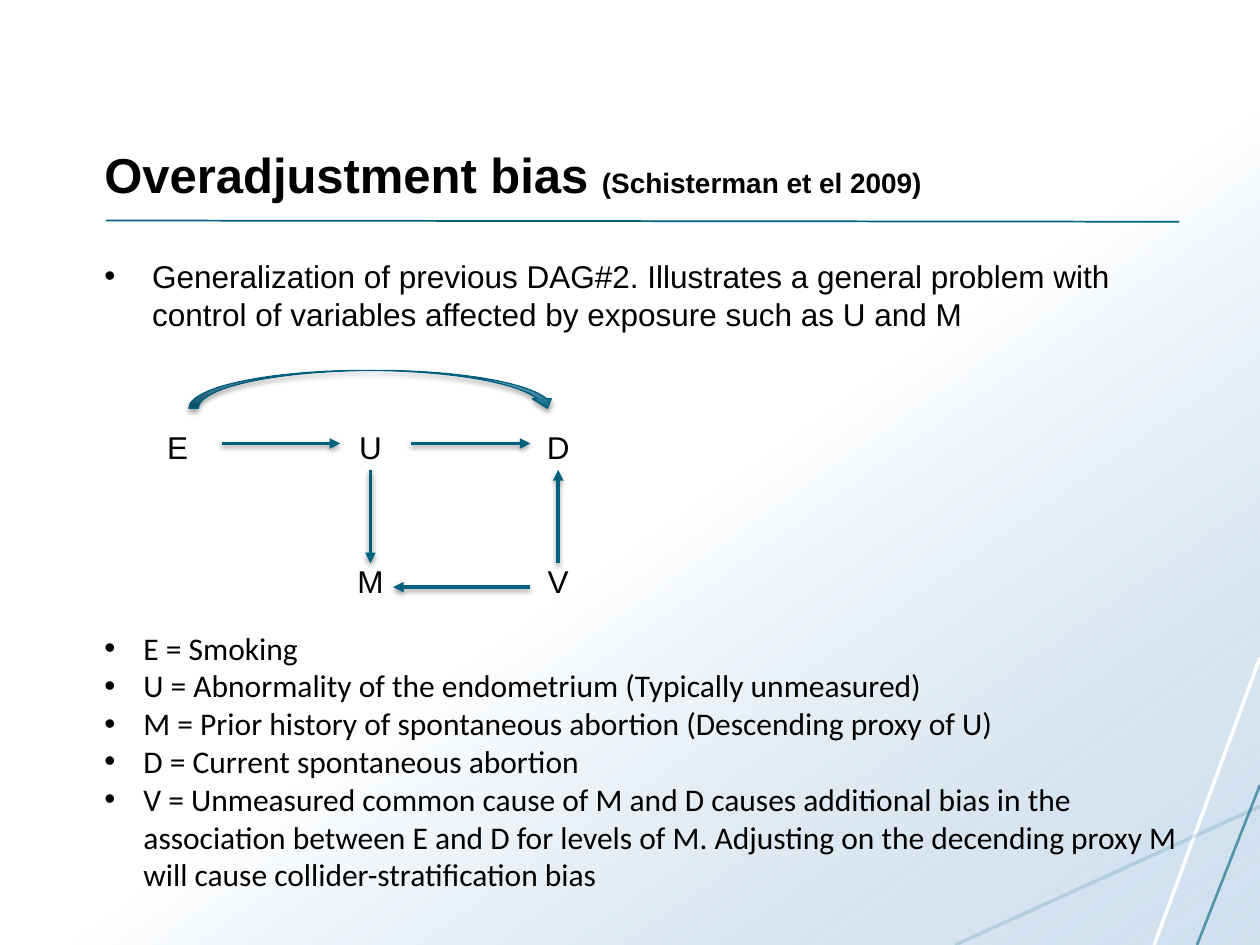
from lxml.etree import SubElement
from pptx import Presentation
from pptx.dml.color import RGBColor
from pptx.enum.shapes import MSO_CONNECTOR, MSO_SHAPE
from pptx.enum.text import MSO_ANCHOR, PP_ALIGN
from pptx.oxml.ns import qn
from pptx.util import Inches, Pt

TEAL, PALE, WHITE, BLACK = "00617F", "A9C7E0", "FFFFFF", "000000"
TOP, BOTTOM = 0, 2


def colour(value):
    return RGBColor.from_string(value)


def add_alpha(parent, percent):
    """Set the opacity of the colour inside parent."""
    for node in parent.iter(qn("a:srgbClr")):
        SubElement(node, qn("a:alpha"), val=str(percent * 1000))


def set_effect(shape, opacity=0, distance=1.6):
    """Give the shape a soft downward shadow, or none at all."""
    effects = SubElement(shape.element.spPr, qn("a:effectLst"))
    if opacity:
        shadow = SubElement(effects, qn("a:outerShdw"), blurRad=str(Pt(3.1)),
                            dist=str(Pt(distance)), dir="5400000", rotWithShape="0")
        SubElement(shadow, qn("a:srgbClr"), val=BLACK)
        add_alpha(shadow, opacity)


class SlideBuilder:
    def __init__(self, slide, font="Arial", size=18):
        self.slide = slide
        self.font = font
        self.size = size

    def span(self, para, text, size=None, font=None, bold=False):
        span = para.add_run()
        span.text = text
        span.font.size = Pt(size or self.size)
        span.font.name = font or self.font
        span.font.bold = bold
        span.font.color.rgb = colour(BLACK)

    def box(self, left, top, width, height, anchor=MSO_ANCHOR.TOP, margin=None):
        box = self.slide.shapes.add_textbox(
            Inches(left), Inches(top), Inches(width), Inches(height))
        frame = box.text_frame
        frame.word_wrap = True
        frame.vertical_anchor = anchor
        if margin is not None:
            frame.margin_left = frame.margin_right = Inches(margin)
            frame.margin_top = frame.margin_bottom = Inches(margin)
        return box

    def bullets(self, box, lines, indent, space_before=0, **style):
        frame = box.text_frame
        for number, line in enumerate(lines):
            para = frame.add_paragraph() if number else frame.paragraphs[0]
            para.space_before = Pt(space_before)
            properties = para._p.get_or_add_pPr()
            properties.set("marL", str(Inches(indent)))
            properties.set("indent", str(-Inches(indent)))
            SubElement(properties, qn("a:buFont"), typeface="Arial")
            SubElement(properties, qn("a:buChar"), char="•")
            self.span(para, line, **style)

    def node(self, text, centre, top, height):
        width = 0.3
        box = self.box(centre - width / 2, top, width, height, MSO_ANCHOR.MIDDLE, margin=0)
        para = box.text_frame.paragraphs[0]
        para.alignment = PP_ALIGN.CENTER
        self.span(para, text)
        return box

    def line(self, start, end, color=TEAL, width=2.0, opacity=100):
        line = self.slide.shapes.add_connector(
            MSO_CONNECTOR.STRAIGHT, *(Inches(value) for value in start + end))
        line.line.color.rgb = colour(color)
        line.line.width = Pt(width)
        if opacity < 100:
            add_alpha(line.line._get_or_add_ln(), opacity)
        return line

    def rule(self, *args, **style):
        set_effect(self.line(*args, **style))

    def arrow(self, start, end):
        arrow = self.line(start, end)
        SubElement(arrow.line._get_or_add_ln(), qn("a:tailEnd"), type="triangle")
        set_effect(arrow, opacity=38)
        return arrow

    def join(self, first, first_side, second, second_side):
        arrow = self.arrow((0, 0), (1, 1))
        arrow.begin_connect(first, first_side)
        arrow.end_connect(second, second_side)

    def gradient(self, kind, left, top, width, height, stops, angle):
        shape = self.slide.shapes.add_shape(
            kind, Inches(left), Inches(top), Inches(width), Inches(height))
        shape.fill.gradient()
        shape.fill.gradient_angle = angle
        for stop, (position, color) in zip(shape.fill.gradient_stops, stops):
            stop.position = position
            stop.color.rgb = colour(color)
        return shape


def main():
    deck = Presentation()
    deck.slide_width, deck.slide_height = Inches(10), Inches(7.5)
    page = SlideBuilder(deck.slides.add_slide(deck.slide_layouts[6]))

    # Background wash and decorative lines
    wash = page.gradient(MSO_SHAPE.RECTANGLE, 0, 0, 10, 7.5,
                         [(0.54, WHITE), (1, PALE)], angle=305)
    wash.line.fill.background()
    wash.shadow.inherit = False
    add_alpha(wash.element.spPr.find(qn("a:gradFill")).find(qn("a:gsLst"))[1], 54)
    page.rule((10, 5.22), (9.16, 7.5), color=WHITE)
    page.rule((10, 6.4), (7.58, 7.5), color="15718F", opacity=16)
    page.rule((10, 6.23), (9.5, 7.5), width=1.5, opacity=60)

    # Title
    page.rule((0.84, 1.75), (9.36, 1.76), width=1)
    title = page.box(0.73, 0.33, 8.62, 1.33, MSO_ANCHOR.BOTTOM).text_frame.paragraphs[0]
    page.span(title, "Overadjustment bias ", size=28, bold=True)
    page.span(title, "(Schisterman et el 2009)", size=16, bold=True)

    # Introduction
    page.bullets(page.box(0.73, 1.99, 8.22, 0.8), [
        "Generalization of previous DAG#2. Illustrates a general problem with "
        "control of variables affected by exposure such as U and M",
    ], indent=0.38, space_before=3.6)

    # Causal diagram
    e_centre, u_centre, d_centre = 1.41, 2.94, 4.43
    upper = {"top": 3.37, "height": 0.36}
    lower = {"top": 4.47, "height": 0.28}
    page.node("E", e_centre, **upper)
    u_node = page.node("U", u_centre, **upper)
    d_node = page.node("D", d_centre, **upper)
    m_node = page.node("M", u_centre, **lower)
    v_node = page.node("V", d_centre, **lower)
    page.arrow((1.76, 3.52), (2.7, 3.52))
    page.arrow((3.26, 3.52), (4.21, 3.52))
    page.arrow((4.21, 4.66), (3.12, 4.66))
    page.join(u_node, BOTTOM, m_node, TOP)
    page.join(v_node, TOP, d_node, BOTTOM)
    curve = page.gradient(MSO_SHAPE.CURVED_DOWN_ARROW, 1.5, 2.94, 2.92, 0.3,
                          [(0, TEAL), (1, PALE)], angle=90)
    curve.line.color.rgb = colour("005F7C")
    curve.line.width = Pt(0.75)
    set_effect(curve, opacity=35, distance=1.8)

    # Legend
    page.bullets(page.box(0.73, 4.94, 8.88, 2.52), [
        "E = Smoking",
        "U = Abnormality of the endometrium (Typically unmeasured)",
        "M = Prior history of spontaneous abortion (Descending proxy of U)",
        "D = Current spontaneous abortion",
        "V = Unmeasured common cause of M and D causes additional bias in the "
        "association between E and D for levels of M. Adjusting on the decending "
        "proxy M will cause collider-stratification bias",
    ], indent=0.31, font="Calibri")

    deck.save("out.pptx")


if __name__ == "__main__":
    main()
